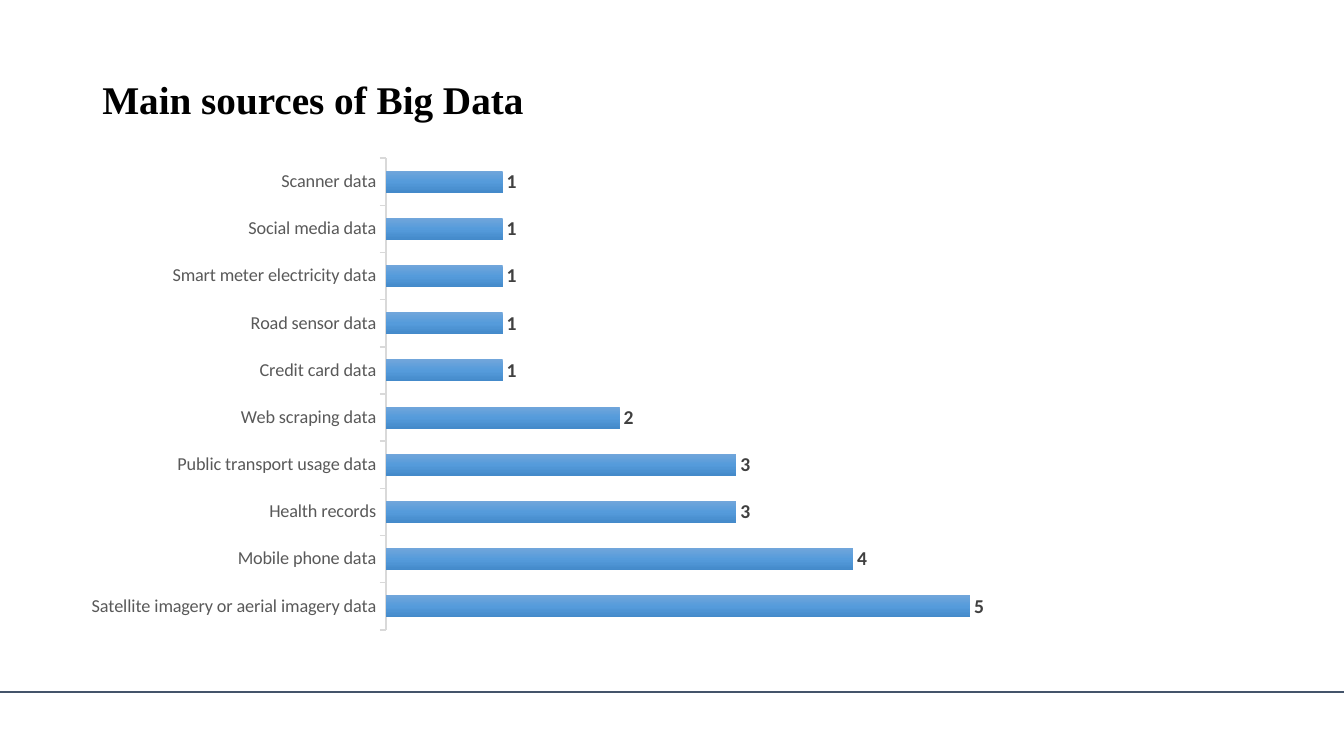
from copy import deepcopy
from pptx import Presentation
from pptx.chart.data import CategoryChartData as Data
from pptx.dml.color import RGBColor as RGB
from pptx.enum.chart import XL_CHART_TYPE as Kind, XL_LABEL_POSITION as Spot
from pptx.enum.chart import XL_TICK_LABEL_POSITION as Label, XL_TICK_MARK as Tick
from pptx.enum.shapes import MSO_CONNECTOR as Link
from pptx.enum.text import MSO_ANCHOR as Anchor
from pptx.oxml import parse_xml
from pptx.oxml.ns import nsdecls, qn
from pptx.util import Pt

WIDE, HIGH = Pt(960), Pt(540)
BLACK = RGB(0x00, 0x00, 0x00)
SLATE = RGB(0x44, 0x54, 0x6A)
GREY = RGB(0x59, 0x59, 0x59)
DARK = RGB(0x40, 0x40, 0x40)
PALE = RGB(0xD9, 0xD9, 0xD9)
BLUES = [RGB(0x71, 0xA6, 0xDB), RGB(0x55, 0x9B, 0xDB), RGB(0x44, 0x8A, 0xCA)]

SOURCES = {
    "Satellite imagery or aerial imagery data": 5,
    "Mobile phone data": 4,
    "Health records": 3,
    "Public transport usage data": 3,
    "Web scraping data": 2,
    "Credit card data": 1,
    "Road sensor data": 1,
    "Smart meter electricity data": 1,
    "Social media data": 1,
    "Scanner data": 1,
}
# Plot area as shares of the chart frame
PLOT = {"x": 0.34, "y": 0.02, "w": 0.64, "h": 0.96}


def apply(item, **values):
    for name, value in values.items():
        setattr(item, name, value)


def style(font, size, color, bold=False, name="Calibri"):
    apply(font, size=Pt(size), bold=bold, name=name)
    font.color.rgb = color


def add_rule(slide, y):
    rule = slide.shapes.add_connector(Link.STRAIGHT, 0, y, WIDE, y)
    rule.line.color.rgb = SLATE
    rule.line.width = Pt(1.5)
    rule.element.spPr.append(parse_xml(f"<a:effectLst {nsdecls('a')}/>"))


def add_title(slide, text):
    box = slide.shapes.add_textbox(Pt(66), Pt(40), Pt(798), Pt(66))
    frame = box.text_frame
    apply(frame, word_wrap=True, vertical_anchor=Anchor.MIDDLE, text=text)
    line = frame.paragraphs[0]
    line.line_spacing = 0.9
    style(line.runs[0].font, 28, BLACK, True, "Times New Roman")


def shade(series):
    fill = series.format.fill
    fill.gradient()
    fill.gradient_angle = 270
    stops = series.format.element.find(".//" + qn("a:gsLst")) if hasattr(
        series.format, "element") else fill.gradient_stops and next(
        series._element.iter(qn("a:gsLst")))
    stops.append(deepcopy(stops[0]))
    for stop, place, color in zip(fill.gradient_stops, (0, 0.5, 1), BLUES):
        stop.position = place
        stop.color.rgb = color


def set_plot(chart):
    area = next(chart.element.iter(qn("c:plotArea")))
    for old in area.findall(qn("c:layout")):
        area.remove(old)
    modes = "".join(f'<c:{key}Mode val="edge"/>' for key in "xy")
    sizes = "".join(f'<c:{key} val="{part}"/>' for key, part in PLOT.items())
    area.insert(0, parse_xml(
        f'<c:layout {nsdecls("c")}><c:manualLayout>'
        f'<c:layoutTarget val="inner"/>{modes}{sizes}'
        '</c:manualLayout></c:layout>'))


def add_bars(slide):
    data = Data()
    data.categories = list(SOURCES)
    data.add_series("Series 1", list(SOURCES.values()))
    chart = slide.shapes.add_chart(
        Kind.BAR_CLUSTERED, Pt(54), Pt(106), Pt(652), Pt(351), data).chart
    apply(chart, has_legend=False, has_title=False)
    style(chart.font, 10, BLACK)
    set_plot(chart)

    # Axes
    axis = chart.category_axis
    apply(axis, major_tick_mark=Tick.OUTSIDE, minor_tick_mark=Tick.NONE,
          tick_label_position=Label.LOW, has_major_gridlines=False)
    style(axis.tick_labels.font, 13, GREY)
    axis.format.line.color.rgb = PALE
    axis.format.line.width = Pt(1)
    apply(chart.value_axis, visible=False, has_major_gridlines=False,
          minimum_scale=0, maximum_scale=5, major_unit=1)

    # Bars and their values
    plot = chart.plots[0]
    apply(plot, gap_width=115, overlap=-20, vary_by_categories=False,
          has_data_labels=True)
    apply(plot.data_labels, show_value=True, position=Spot.OUTSIDE_END)
    style(plot.data_labels.font, 14, DARK, True)
    shade(plot.series[0])


def main():
    deck = Presentation()
    apply(deck, slide_width=WIDE, slide_height=HIGH)
    slide = deck.slides.add_slide(deck.slide_layouts[6])
    add_rule(slide, Pt(494))
    add_title(slide, "Main sources of Big Data")
    add_bars(slide)
    deck.save("out.pptx")


if __name__ == "__main__":
    main()
